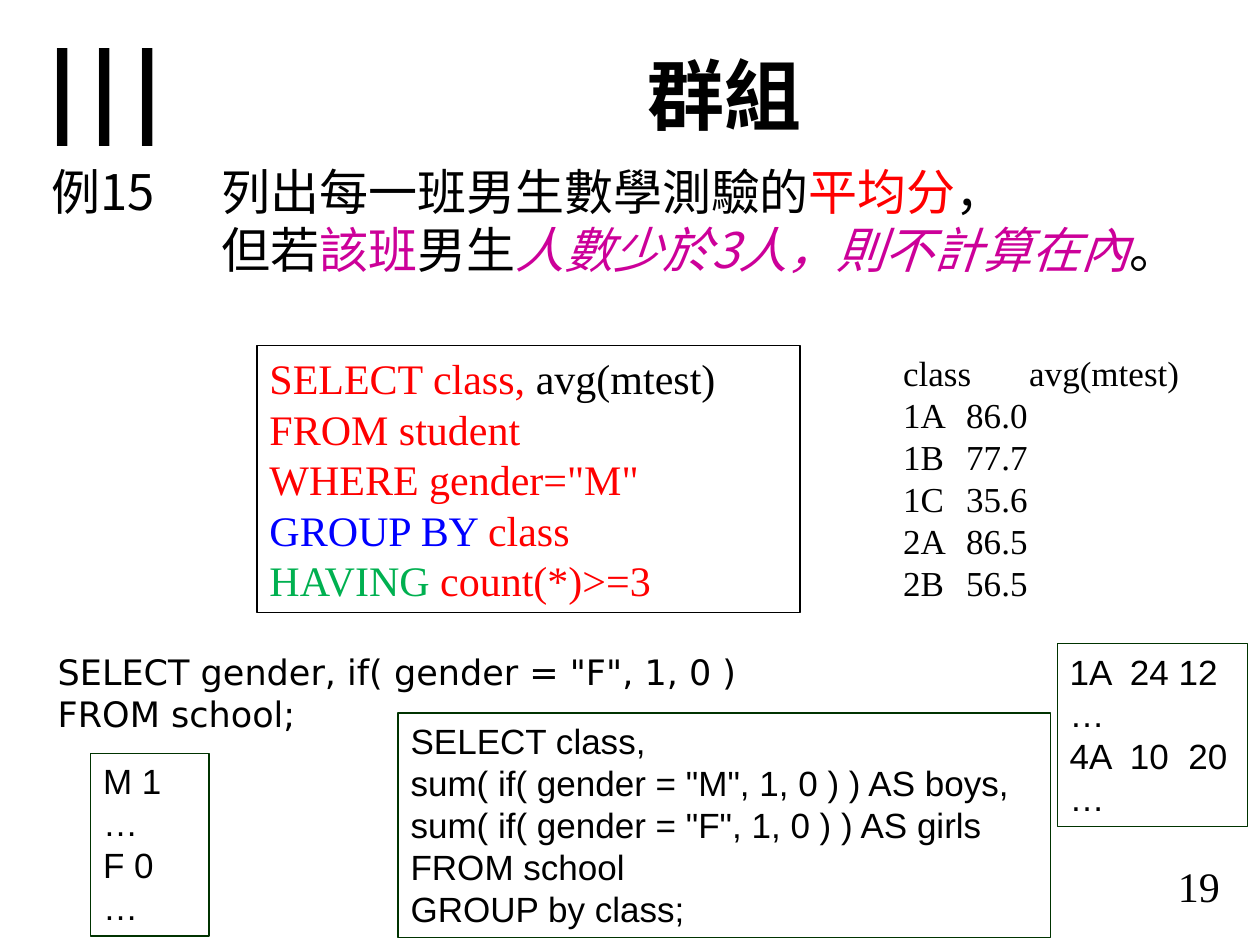
import dataclasses
import typing

import lxml.etree
import pptx
import pptx.dml.color
import pptx.enum.shapes
import pptx.enum.text
import pptx.oxml.ns
import pptx.util

Inches = pptx.util.Inches
Anchor = pptx.enum.text.MSO_ANCHOR
Align = pptx.enum.text.PP_ALIGN

COLORS = {
    "black": "000000",
    "red": "FF0000",
    "magenta": "CC0099",
    "blue": "0000FF",
    "green": "00B050",
    "dark green": "003300",
}


@dataclasses.dataclass(frozen=True)
class Piece:
    text: str
    color: str = "black"
    italic: bool = False


Line = typing.Sequence[Piece]


@dataclasses.dataclass(frozen=True)
class TextBlock:
    left: float
    top: float
    width: float
    height: float
    lines: typing.Sequence[Line]
    font: str
    size: int
    border: typing.Optional[str] = None
    anchor: typing.Any = Anchor.TOP
    align: typing.Any = Align.LEFT
    wrap: bool = True


def plain(*texts: str) -> list[Line]:
    return [[Piece(text)] for text in texts]


def rgb(name: str) -> pptx.dml.color.RGBColor:
    return pptx.dml.color.RGBColor.from_string(COLORS[name])


def place(shape, left: float, top: float, width: float, height: float) -> None:
    shape.left, shape.top = Inches(left), Inches(top)
    shape.width, shape.height = Inches(width), Inches(height)


def write_lines(text_frame, lines: typing.Sequence[Line], font: str, size: int, align) -> None:
    for index, line in enumerate(lines):
        paragraph = text_frame.paragraphs[0] if index == 0 else text_frame.add_paragraph()
        paragraph.alignment = align
        for piece in line:
            run = paragraph.add_run()
            run.text = piece.text
            run.font.name = font
            run.font.size = pptx.util.Pt(size)
            run.font.italic = piece.italic
            run.font.color.rgb = rgb(piece.color)


def draw_block(slide, block: TextBlock) -> None:
    bounds = [Inches(value) for value in (block.left, block.top, block.width, block.height)]
    if block.border:
        shape = slide.shapes.add_shape(pptx.enum.shapes.MSO_SHAPE.RECTANGLE, *bounds)
        shape.shadow.inherit = False
        shape.fill.background()
        shape.line.color.rgb = rgb(block.border)
        shape.line.width = pptx.util.Pt(0.75)
    else:
        shape = slide.shapes.add_textbox(*bounds)
    text_frame = shape.text_frame
    text_frame.word_wrap = block.wrap
    text_frame.vertical_anchor = block.anchor
    write_lines(text_frame, block.lines, block.font, block.size, block.align)


def fill_title(title) -> None:
    place(title, 1.5, 0.33, 8.5, 0.83)
    title.text_frame.text = "群組"
    title.text_frame.vertical_anchor = Anchor.BOTTOM
    title.text_frame.auto_size = pptx.enum.text.MSO_AUTO_SIZE.NONE
    paragraph = title.text_frame.paragraphs[0]
    paragraph.alignment = Align.CENTER
    font = paragraph.runs[0].font
    font.name, font.size, font.bold = "Arial", pptx.util.Pt(44), True
    font.color.rgb = rgb("black")


def fill_body(body, lines: typing.Sequence[Line]) -> None:
    place(body, 0, 1.32, 9.75, 1.2)
    body.text_frame.auto_size = pptx.enum.text.MSO_AUTO_SIZE.NONE
    font_name = "Noto Sans CJK JP"
    write_lines(body.text_frame, lines, font_name, 28, Align.LEFT)
    for paragraph in body.text_frame.paragraphs:
        paragraph.line_spacing = 0.81
        paragraph.space_before = pptx.util.Pt(6)
        properties = paragraph._p.get_or_add_pPr()
        properties.set("marL", str(Inches(1.66)))
        properties.set("indent", str(Inches(-1.35)))
        lxml.etree.SubElement(properties, pptx.oxml.ns.qn("a:buNone"))
        for run in paragraph.runs:
            latin = run._r.rPr.find(pptx.oxml.ns.qn("a:latin"))
            east_asian = lxml.etree.Element(pptx.oxml.ns.qn("a:ea"), typeface=font_name)
            latin.addnext(east_asian)


EXAMPLE = [
    [Piece("例15\t列出每一班男生數學測驗的"), Piece("平均分", "red"), Piece("，")],
    [
        Piece("\t但若"),
        Piece("該班", "magenta"),
        Piece("男生"),
        Piece("人數少於3人，則不計算在內", "magenta", True),
        Piece("。"),
    ],
]

QUERY = [
    [Piece("SELECT class, ", "red"), Piece("avg(mtest)")],
    [Piece("FROM student", "red")],
    [Piece('WHERE gender="M"', "red")],
    [Piece("GROUP BY ", "blue"), Piece("class", "red")],
    [Piece("HAVING", "green"), Piece(" count(*)>=3", "red")],
]

AVERAGES = plain("class\tavg(mtest)", "1A\t86.0", "1B\t77.7", "1C\t35.6", "2A\t86.5", "2B\t56.5")

COUNT_QUERY = plain(
    "SELECT class,",
    'sum( if( gender = "M", 1, 0 ) ) AS boys,',
    'sum( if( gender = "F", 1, 0 ) ) AS girls',
    "FROM school",
    "GROUP by class;",
)

FLAG_QUERY = plain('SELECT gender, if( gender = "F", 1, 0 )', "FROM school;")

BLOCKS = [
    TextBlock(0, 0, 1.67, 1.43, plain("III"), "Montserrat", 80, align=Align.CENTER),
    TextBlock(2.04, 2.74, 4.31, 2.12, QUERY, "Times New Roman", 24, "black", Anchor.MIDDLE),
    TextBlock(7.07, 2.74, 2.41, 2.12, AVERAGES, "Times New Roman", 20, wrap=False),
    TextBlock(7.7, 6.78, 2.08, 0.5, plain("19"), "Times New Roman", 24,
              anchor=Anchor.MIDDLE, align=Align.RIGHT),
    TextBlock(3.16, 5.66, 5.18, 1.78, COUNT_QUERY, "Arial", 20, "dark green"),
    TextBlock(0.36, 5.11, 5.96, 0.77, FLAG_QUERY, "DejaVu Sans", 20),
    TextBlock(0.72, 5.98, 0.94, 1.45, plain("M 1", "…", "F 0", "…"), "Arial", 20, "dark green"),
    TextBlock(8.39, 5.11, 1.51, 1.45, plain("1A  24 12", "…", "4A  10  20", "…"),
              "Arial", 20, "dark green"),
]


def main() -> None:
    presentation = pptx.Presentation()
    presentation.slide_width, presentation.slide_height = Inches(10), Inches(7.5)
    slide = presentation.slides.add_slide(presentation.slide_layouts[1])
    fill_title(slide.shapes.title)
    fill_body(slide.placeholders[1], EXAMPLE)
    for block in BLOCKS:
        draw_block(slide, block)
    presentation.save("out.pptx")


if __name__ == "__main__":
    main()
